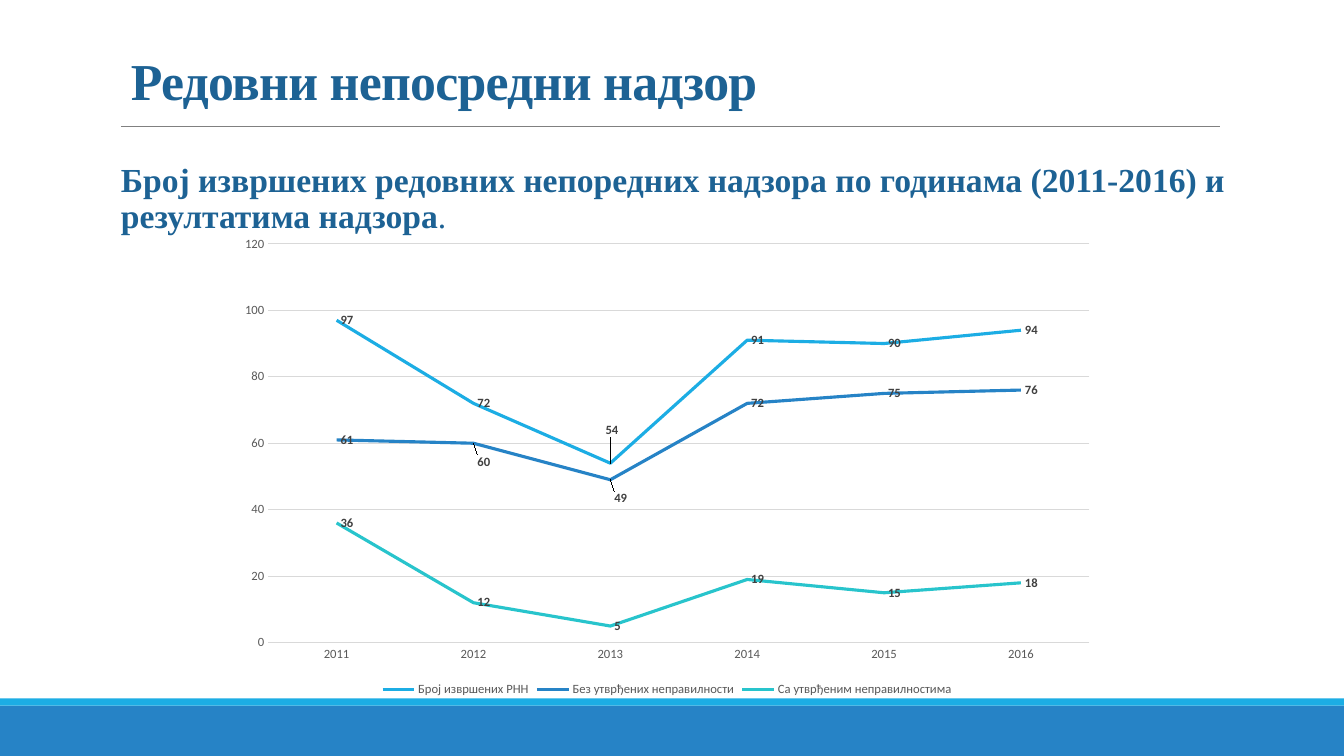
from lxml import etree
from pptx import Presentation
from pptx.chart.data import CategoryChartData
from pptx.dml.color import RGBColor
from pptx.enum.chart import XL_CHART_TYPE, XL_LABEL_POSITION, XL_LEGEND_POSITION, XL_MARKER_STYLE, XL_TICK_MARK
from pptx.enum.shapes import MSO_CONNECTOR, MSO_SHAPE
from pptx.enum.text import MSO_ANCHOR
from pptx.oxml.ns import qn
from pptx.util import Inches, Pt

LINE_CHART = XL_CHART_TYPE.LINE
LABEL_RIGHT = XL_LABEL_POSITION.RIGHT
LEGEND_BOTTOM = XL_LEGEND_POSITION.BOTTOM
NO_MARKER = XL_MARKER_STYLE.NONE
NO_TICK = XL_TICK_MARK.NONE
STRAIGHT = MSO_CONNECTOR.STRAIGHT
RECT = MSO_SHAPE.RECTANGLE
TOP = MSO_ANCHOR.TOP

BLUE = RGBColor(0x26, 0x83, 0xC6)
SKY = RGBColor(0x1C, 0xAD, 0xE4)
TEAL = RGBColor(0x28, 0xC4, 0xCC)
NAVY = RGBColor(0x1D, 0x62, 0x94)
RULE = RGBColor(0x80, 0x80, 0x80)
GRID = RGBColor(0xD9, 0xD9, 0xD9)
AXIS_TEXT = RGBColor(0x59, 0x59, 0x59)
LABEL_TEXT = RGBColor(0x40, 0x40, 0x40)

YEARS = ["2011", "2012", "2013", "2014", "2015", "2016"]
SERIES = [
    ("Број извршених РНН", SKY, [97, 72, 54, 91, 90, 94], {2: (-0.01, -0.07)}),
    ("Без утврђених неправилности", BLUE, [61, 60, 49, 72, 75, 76], {1: (0, 0.04), 2: (0, 0.04)}),
    ("Са утврђеним неправилностима", TEAL, [36, 12, 5, 19, 15, 18], {}),
]


class Deck:
    """Holds the text style and the current slide, and draws its elements."""

    def __init__(self, prs, heading_font, chart_font):
        self.slide = prs.slides.add_slide(prs.slide_layouts[6])
        self.heading_font = heading_font
        self.chart_font = chart_font

    def band(self, top, height, color):
        sp = self.slide.shapes.add_shape(RECT, 0, Inches(top), Inches(13.33), Inches(height))
        sp.shadow.inherit = False
        sp.fill.solid()
        sp.fill.fore_color.rgb = color
        sp.line.fill.background()

    def rule(self, x1, x2, y):
        cn = self.slide.shapes.add_connector(STRAIGHT, Inches(x1), Inches(y), Inches(x2), Inches(y))
        cn.line.color.rgb = RULE
        cn.line.width = Pt(0.5)
        etree.SubElement(cn._element.spPr, qn("a:effectLst"))

    def text(self, box, runs, size, leading, side=0.1, top=0.05, before=0, after=0, tracking=0):
        sp = self.slide.shapes.add_textbox(*map(Inches, box))
        tf = sp.text_frame
        tf.word_wrap = True
        tf.vertical_anchor = TOP
        tf.margin_left = tf.margin_right = Inches(side)
        tf.margin_top = Inches(top)
        p = tf.paragraphs[0]
        p.line_spacing = leading
        p.space_before, p.space_after = Pt(before), Pt(after)
        for words, bold in runs:
            r = p.add_run()
            r.text = words
            self.font(r.font, self.heading_font, size, NAVY, bold)
            if tracking:
                r._r.get_or_add_rPr().set("spc", str(int(tracking * 100)))

    def font(self, font, name, size, color, bold=False):
        font.name, font.size, font.bold = name, Pt(size), bold
        font.color.rgb = color

    def layout(self, parent, index, **values):
        for old in parent.findall(qn("c:layout")):
            parent.remove(old)
        layout = etree.Element(qn("c:layout"))
        manual = etree.SubElement(layout, qn("c:manualLayout"))
        for tag, value in values.items():
            etree.SubElement(manual, qn(f"c:{tag}")).set("val", str(value))
        parent.insert(index, layout)

    def axis(self, axis):
        axis.major_tick_mark = axis.minor_tick_mark = NO_TICK
        self.font(axis.tick_labels.font, self.chart_font, 9, AXIS_TEXT)

    def series(self, series, color, offsets):
        series.smooth = False
        series.marker.style = NO_MARKER
        series.format.line.color.rgb = color
        series.format.line.width = Pt(2.25)
        labels = series.data_labels
        labels.show_value = True
        labels.position = LABEL_RIGHT
        self.font(labels.font, self.chart_font, 9, LABEL_TEXT, True)
        for i, (dx, dy) in offsets.items():
            label = series.points[i].data_label
            label.position = LABEL_RIGHT
            self.font(label.font, self.chart_font, 9, LABEL_TEXT, True)
            node = series._element.xpath(f'c:dLbls/c:dLbl[c:idx/@val="{i}"]')[0]
            self.layout(node, 1, x=dx, y=dy)

    def line_chart(self, box, categories, rows):
        data = CategoryChartData()
        data.categories = categories
        for name, _, values, _ in rows:
            data.add_series(name, values)
        chart = self.slide.shapes.add_chart(LINE_CHART, *map(Inches, box), data).chart
        chart.has_title = False
        chart.font.name, chart.font.size = self.chart_font, Pt(10)
        chart.has_legend = True
        chart.legend.position = LEGEND_BOTTOM
        chart.legend.include_in_layout = False
        self.font(chart.legend.font, self.chart_font, 9, AXIS_TEXT)
        cat, val = chart.category_axis, chart.value_axis
        self.axis(cat)
        self.axis(val)
        val.minimum_scale, val.maximum_scale, val.major_unit = 0, 120, 20
        val.format.line.fill.background()
        for line in (cat.format.line, val.major_gridlines.format.line):
            line.color.rgb = GRID
            line.width = Pt(0.75)
        plot = chart.plots[0]
        plot.vary_by_categories = False
        for series, (_, color, _, offsets) in zip(plot.series, rows):
            self.series(series, color, offsets)
        area = chart._chartSpace.chart.plotArea
        self.layout(area, 0, layoutTarget="inner", xMode="edge", yMode="edge",
                    x=0.047, y=0.036, w=0.933, h=0.842)


def main():
    prs = Presentation()
    prs.slide_width, prs.slide_height = Inches(13.33), Inches(7.5)
    deck = Deck(prs, "Times New Roman", "Calibri")
    deck.band(7, 0.5, BLUE)
    deck.band(6.93, 0.07, SKY)
    deck.rule(1.2, 12.1, 1.25)
    deck.text((1.2, 0.31, 11, 1.59), [("Редовни непосредни надзор", True)],
              37, 0.85, top=0.27, tracking=-0.5)
    deck.text((1.2, 1.57, 11, 1.07),
              [("Број извршених редовних непоредних надзора по годинама (2011-2016) "
                "и резултатима надзора", True), (".", False)],
              24, 0.9, side=0, before=12, after=2)
    deck.line_chart((2.25, 2.25, 8.73, 4.7), YEARS, SERIES)
    prs.save("out.pptx")


if __name__ == "__main__":
    main()
